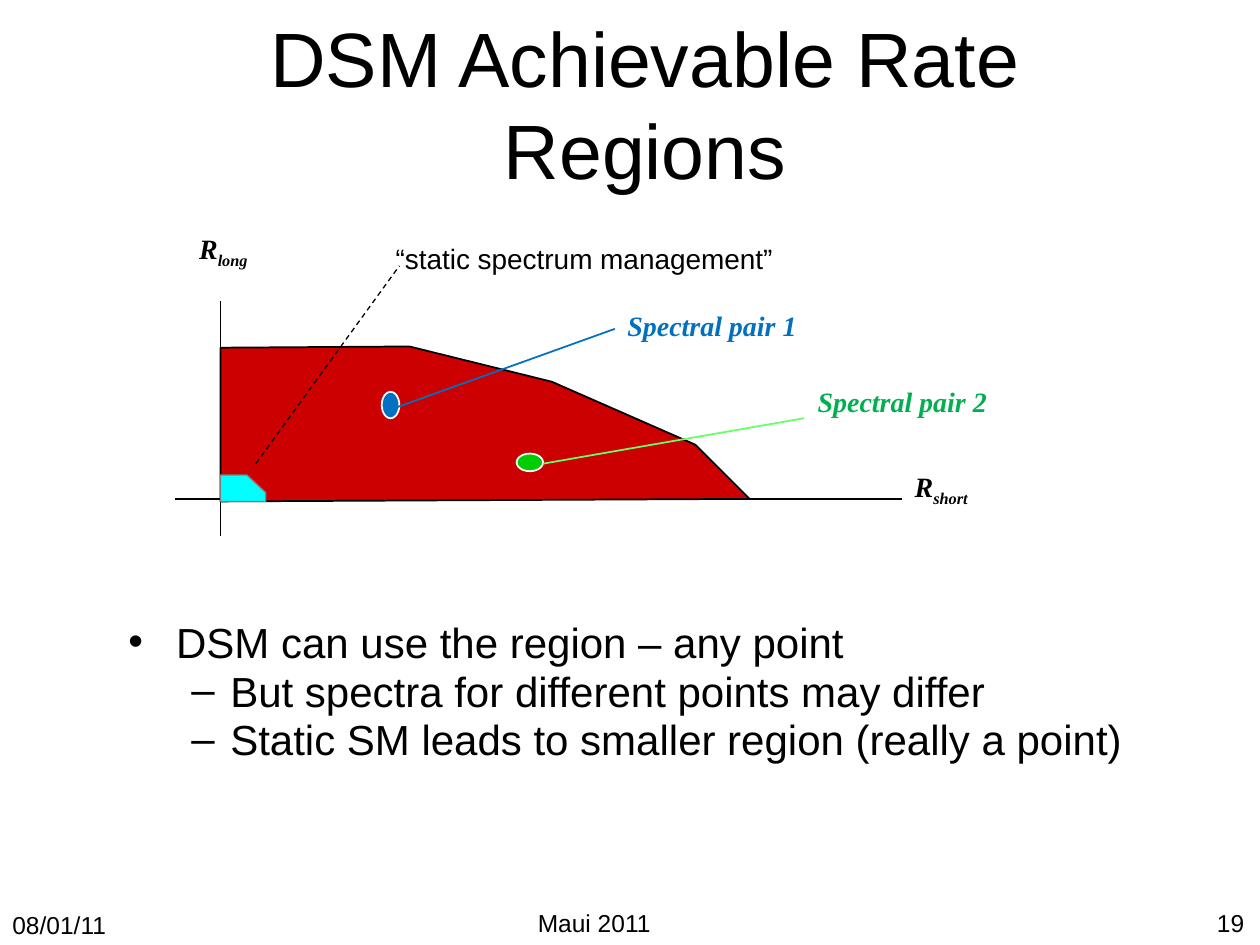
from dataclasses import dataclass

from lxml import etree
from pptx import Presentation
from pptx import util as u
from pptx.dml.color import RGBColor
from pptx.enum import dml, shapes, text
from pptx.oxml import ns

BLACK = RGBColor(0x00, 0x00, 0x00)
WHITE = RGBColor(0xFF, 0xFF, 0xFF)
GRAY = RGBColor(0x80, 0x80, 0x80)
RED = RGBColor(0xCC, 0x00, 0x00)
CYAN = RGBColor(0x00, 0xFF, 0xFF)
BLUE = RGBColor(0x00, 0x70, 0xC0)
GREEN = RGBColor(0x00, 0xCC, 0x00)
LIGHT_GREEN = RGBColor(0x66, 0xFF, 0x66)
LABEL_GREEN = RGBColor(0x00, 0xB0, 0x50)

SANS = "Arial"
SERIF = "Times New Roman"
TIGHT = (0.04, 0.02, 0.04, 0.02)
NORMAL = (0.1, 0.05, 0.1, 0.05)

Box = tuple[float, float, float, float]
Point = tuple[float, float]


@dataclass
class Region:
    outline: list[Point]
    fill: RGBColor
    line: RGBColor
    weight: float


@dataclass
class SpectralPair:
    label: str
    label_box: Box
    label_color: RGBColor
    marker_box: Box
    marker_color: RGBColor
    leader: tuple[Point, Point]
    leader_color: RGBColor


@dataclass
class Bullet:
    content: str
    level: int
    mark: str
    indent: float
    hanging: float


RATE_REGION = Region(
    [(1.75, 3.98), (1.75, 2.76), (3.25, 2.75), (4.38, 3.03), (5.52, 3.53), (5.95, 3.96)],
    RED, BLACK, 1)
STATIC_REGION = Region(
    [(1.75, 3.98), (1.75, 3.77), (1.96, 3.77), (2.11, 3.91), (2.11, 3.98)],
    CYAN, GRAY, 0.75)
PAIRS = [
    SpectralPair("Spectral pair 1", (4.94, 2.43, 1.9, 0.43), BLUE,
                 (3.03, 3.11, 0.14, 0.21), BLUE, ((3.1, 3.25), (4.88, 2.61)), BLUE),
    SpectralPair("Spectral pair 2", (6.45, 3.03, 1.9, 0.43), LABEL_GREEN,
                 (4.1, 3.6, 0.21, 0.14), GREEN, ((4.31, 3.68), (6.38, 3.32)), LIGHT_GREEN),
]
AXES = [((1.75, 2.39), (1.75, 4.25)), ((1.39, 3.96), (7.16, 3.96))]
AXIS_LABELS = [("long", (1.54, 1.82, 0.71, 0.43)), ("short", (7.22, 3.71, 0.76, 0.43))]
BULLETS = [
    Bullet("DSM can use the region – any point", 0, "•", 0.38, 0.38),
    Bullet("But spectra for different points may differ", 1, "–", 0.81, 0.31),
    Bullet("Static SM leads to smaller region (really a point)", 1, "–", 0.81, 0.31),
]
FOOTERS = [
    ("19", (9.56, 7.16, 0.55, 0.33), False),
    ("Maui 2011", (4.17, 7.16, 1.1, 0.34), False),
    ("08/01/11", (0, 7.17, 0.96, 0.33), True),
]


def write(paragraph, content: str, *, size: float, font: str = SANS, color: RGBColor = BLACK,
          strong: bool = False, subscript: str = "") -> None:
    for part in filter(None, (content, subscript)):
        run = paragraph.add_run()
        run.text = part
        run.font.size = u.Pt(size)
        run.font.name = font
        run.font.color.rgb = color
        run.font.bold = run.font.italic = strong
    if subscript:
        run._r.get_or_add_rPr().set("baseline", "-25000")


def place(shape, box: Box) -> None:
    shape.left, shape.top, shape.width, shape.height = map(u.Inches, box)


def add_frame(slide, box: Box, insets: Box = NORMAL, wrap: bool = True):
    frame = slide.shapes.add_textbox(*map(u.Inches, box)).text_frame
    frame.word_wrap = wrap
    frame.margin_left, frame.margin_top, frame.margin_right, frame.margin_bottom = map(
        u.Inches, insets)
    return frame


def add_label(slide, content: str, box: Box, **style) -> None:
    write(add_frame(slide, box, TIGHT).paragraphs[0], content, size=16, **style)


def add_line(slide, start: Point, end: Point, color: RGBColor = BLACK,
             weight: float = 1, dashed: bool = False) -> None:
    line = slide.shapes.add_connector(
        shapes.MSO_CONNECTOR.STRAIGHT, *map(u.Inches, start + end))
    line.line.color.rgb = color
    line.line.width = u.Pt(weight)
    if dashed:
        line.line.dash_style = dml.MSO_LINE.DASH
    etree.SubElement(line._element.spPr, ns.qn("a:effectLst"))


def paint(shape, fill: RGBColor, line: RGBColor, weight: float) -> None:
    shape.shadow.inherit = False
    shape.fill.solid()
    shape.fill.fore_color.rgb = fill
    shape.line.color.rgb = line
    shape.line.width = u.Pt(weight)


def add_region(slide, region: Region) -> None:
    start, *rest = [(u.Inches(x), u.Inches(y)) for x, y in region.outline]
    builder = slide.shapes.build_freeform(*start)
    builder.add_line_segments(rest, close=True)
    paint(builder.convert_to_shape(), region.fill, region.line, region.weight)


def add_pair(slide, pair: SpectralPair) -> None:
    marker = slide.shapes.add_shape(shapes.MSO_SHAPE.OVAL, *map(u.Inches, pair.marker_box))
    paint(marker, pair.marker_color, WHITE, 1)
    add_line(slide, *pair.leader, color=pair.leader_color)
    add_label(slide, pair.label, pair.label_box, font=SERIF, color=pair.label_color, strong=True)


def add_bullets(slide, bullets: list[Bullet], box: Box) -> None:
    frame = add_frame(slide, box)
    for index, bullet in enumerate(bullets):
        paragraph = frame.add_paragraph() if index else frame.paragraphs[0]
        paragraph.level = bullet.level
        paragraph.line_spacing = 0.8
        paragraph.space_before = u.Pt(4.8 if index else 0)
        properties = paragraph._p.get_or_add_pPr()
        properties.set("marL", str(u.Inches(bullet.indent)))
        properties.set("indent", str(-u.Inches(bullet.hanging)))
        etree.SubElement(properties, ns.qn("a:buFont"), typeface=SANS)
        etree.SubElement(properties, ns.qn("a:buChar"), char=bullet.mark)
        write(paragraph, bullet.content, size=24)


def set_title(slide, content: str) -> None:
    title = slide.shapes.title
    place(title, (1.08, 0.3, 8.08, 1.03))
    frame = title.text_frame
    frame.auto_size = text.MSO_AUTO_SIZE.NONE
    frame.word_wrap = True
    frame.vertical_anchor = text.MSO_ANCHOR.MIDDLE
    frame.paragraphs[0].alignment = text.PP_ALIGN.CENTER
    write(frame.paragraphs[0], content, size=44)


def main() -> None:
    deck = Presentation()
    deck.slide_width, deck.slide_height = u.Inches(10), u.Inches(7.5)
    slide = deck.slides.add_slide(deck.slide_layouts[5])

    for content, box, wrap in FOOTERS:
        write(add_frame(slide, box, wrap=wrap).paragraphs[0], content, size=14)
    set_title(slide, "DSM Achievable Rate Regions")
    add_bullets(slide, BULLETS, (0.92, 4.92, 8.17, 1.42))

    for start, end in AXES:
        add_line(slide, start, end)
    for subscript, box in AXIS_LABELS:
        add_label(slide, "R", box, font=SERIF, strong=True, subscript=subscript)
    add_region(slide, RATE_REGION)
    for pair in PAIRS:
        add_pair(slide, pair)
    add_region(slide, STATIC_REGION)
    add_line(slide, (2.03, 3.68), (3.17, 2.11), weight=0.75, dashed=True)
    add_label(slide, "“static spectrum management”", (3.1, 1.9, 3.77, 0.27))

    deck.save("out.pptx")


if __name__ == "__main__":
    main()
